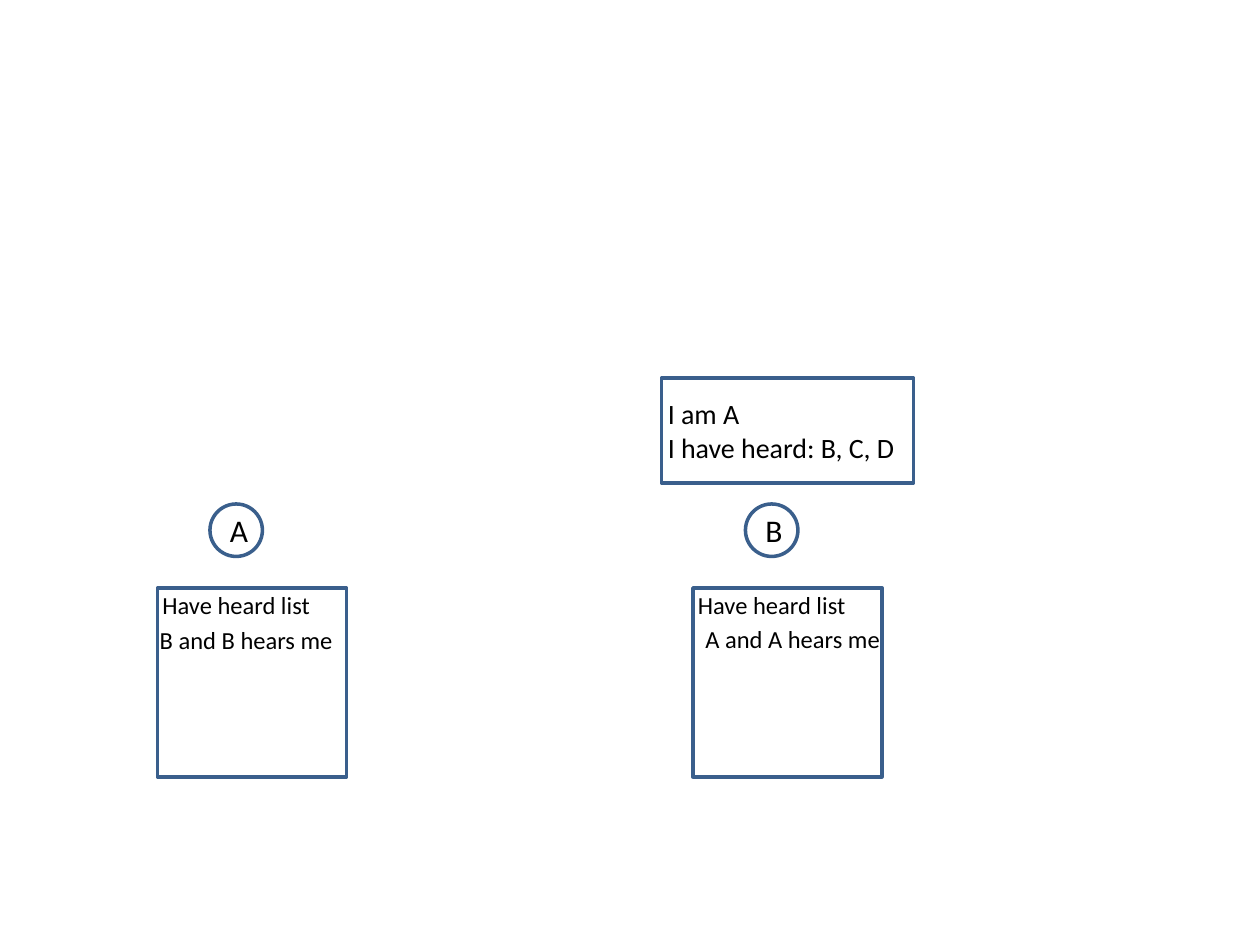
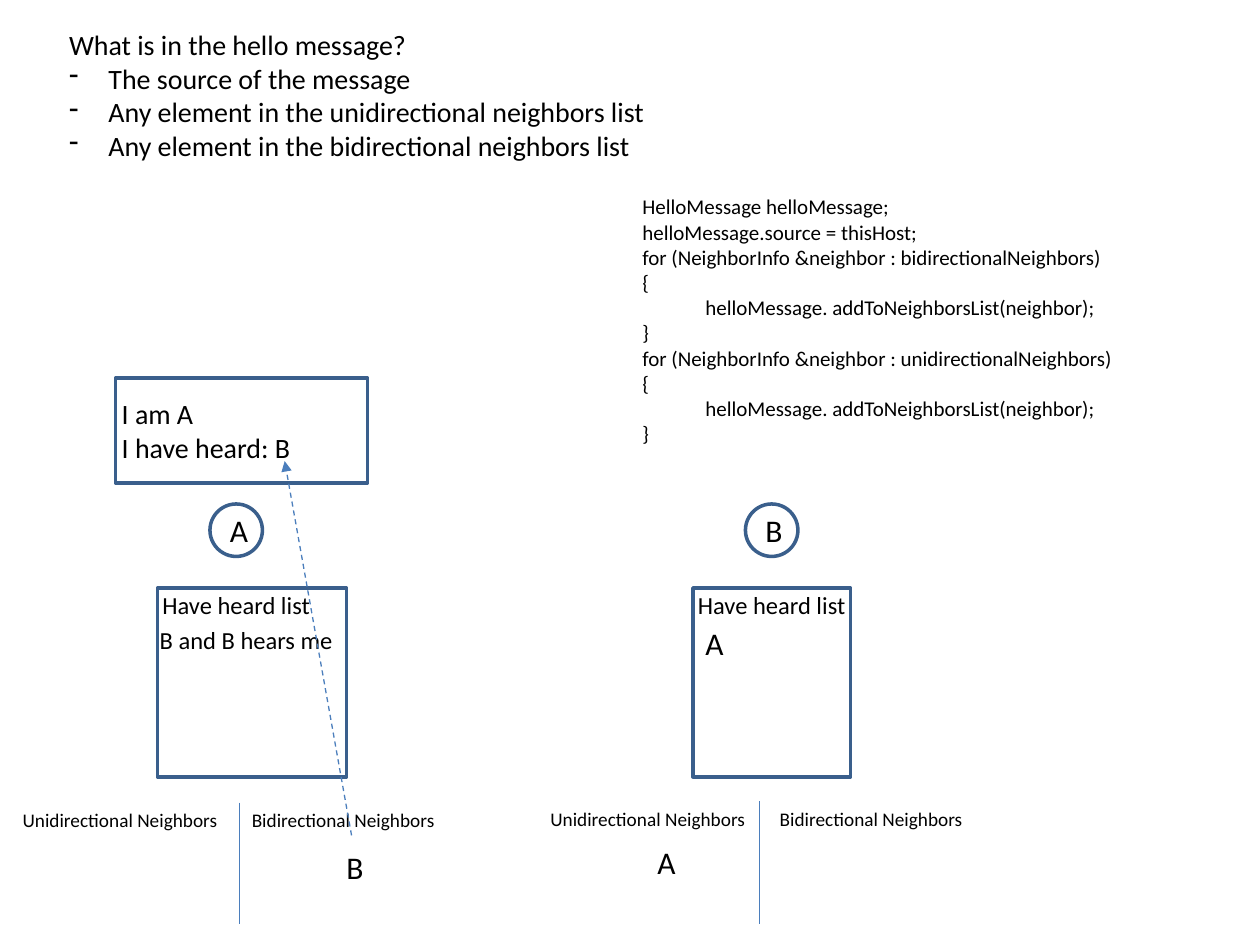
from lxml import etree
from pptx import Presentation
from pptx.dml.color import RGBColor
from pptx.enum.dml import MSO_LINE
from pptx.enum.shapes import MSO_CONNECTOR, MSO_SHAPE
from pptx.enum.text import MSO_ANCHOR, MSO_AUTO_SIZE, PP_ALIGN
from pptx.oxml.ns import qn
from pptx.util import Pt

OVAL, RECTANGLE = MSO_SHAPE.OVAL, MSO_SHAPE.RECTANGLE
STRAIGHT, DASH = MSO_CONNECTOR.STRAIGHT, MSO_LINE.DASH
MIDDLE, CENTER, LEFT = MSO_ANCHOR.MIDDLE, PP_ALIGN.CENTER, PP_ALIGN.LEFT
NO_FIT, GROW = MSO_AUTO_SIZE.NONE, MSO_AUTO_SIZE.SHAPE_TO_FIT_TEXT

OUTLINE = RGBColor(0x3A, 0x5F, 0x8C)
CONNECTOR = RGBColor(0x4B, 0x7E, 0xBC)
BLACK = RGBColor(0, 0, 0)
FONT = "Calibri"

# Content: each host has a heard-list entry (text, size, left, top, width)
HOST_X = {"A": 90, "B": 396}
A_ENTRY = ("B and B hears me", 14, 84.2, 353.5, 114.5)
SLIDES = [
    {
        "hosts": {
            "A": {"list_width": 108, "entry": A_ENTRY},
            "B": {"list_width": 108,
                  "entry": ("A and A hears me", 14, 396, 352.8, 115.2)},
        },
        "message": (378, ["I am A", "I have heard: B, C, D"]),
    },
    {
        "hosts": {
            "A": {"list_width": 108, "entry": A_ENTRY},
            "B": {"list_width": 90, "entry": ("A", 18, 396, 352.8, 25.2)},
        },
        "message": (66, ["I am A", "I have heard: B"]),
    },
]

# Neighbor tables: divider x, top, left of each heading, entry and its place
NEIGHBOR_TABLES = [
    {"divider": 136.8, "top": 458.6, "headings": (5.8, 136.8),
     "entry": ("B", 190.8, 481)},
    {"divider": 434.2, "top": 457.9, "headings": (307.4, 438.5),
     "entry": ("A", 368.6, 478.1)},
]
HEADINGS = [("Unidirectional Neighbors", 126.7), ("Bidirectional Neighbors", 119.5)]
TABLE_BOTTOM = 527.8
ENTRY_ARROW = ((200.9, 477.4), (162.7, 263.5))

QUESTION = "What is in the hello message?"
ANSWERS = [
    "The source of the message",
    "Any element in the unidirectional neighbors list",
    "Any element in the bidirectional neighbors list",
]
CODE = ["HelloMessage helloMessage;", "helloMessage.source = thisHost;"]
for direction in ("bidirectional", "unidirectional"):
    CODE += [f"for (NeighborInfo &neighbor : {direction}Neighbors)", "{",
             "\thelloMessage. addToNeighborsList(neighbor);", "}"]


def write(frame, lines, size, align=LEFT):
    for index, line in enumerate(lines):
        paragraph = frame.paragraphs[0] if index == 0 else frame.add_paragraph()
        paragraph.text = line
        paragraph.alignment = align
        paragraph.font.name = FONT
        paragraph.font.size = Pt(size)
        paragraph.font.color.rgb = BLACK


def add_text(slide, lines, size, left, top, width, height):
    box = slide.shapes.add_textbox(Pt(left), Pt(top), Pt(width), Pt(height))
    box.text_frame.word_wrap = False
    box.text_frame.auto_size = GROW
    write(box.text_frame, lines, size)
    return box.text_frame


def add_outline(slide, kind, left, top, width, height):
    shape = slide.shapes.add_shape(kind, Pt(left), Pt(top), Pt(width), Pt(height))
    shape.shadow.inherit = False
    shape.fill.background()
    shape.line.color.rgb = OUTLINE
    shape.line.width = Pt(2)
    shape.text_frame.vertical_anchor = MIDDLE
    return shape.text_frame


def add_line(slide, start, end):
    line = slide.shapes.add_connector(STRAIGHT, *map(Pt, start + end))
    line.line.color.rgb = CONNECTOR
    line.line.width = Pt(0.75)
    etree.SubElement(line._element.spPr, qn("a:effectLst"))
    return line


def add_bullet(paragraph):
    properties = paragraph._p.get_or_add_pPr()
    properties.set("marL", str(Pt(22.5)))
    properties.set("indent", str(-Pt(22.5)))
    etree.SubElement(properties, qn("a:buChar")).set("char", "-")
    # The bullet must come before the default run properties
    defaults = properties.find(qn("a:defRPr"))
    if defaults is not None:
        properties.append(defaults)


def add_hosts(slide, hosts):
    for name, host in hosts.items():
        left = HOST_X[name]
        write(add_outline(slide, OVAL, left + 30, 288, 30, 30), [name], 18, CENTER)
        add_outline(slide, RECTANGLE, left, 336, host["list_width"], 108)
        add_text(slide, ["Have heard list"], 14, left - 4.3, 333.4, 100, 24.2)
        text, size, entry_left, top, width = host["entry"]
        add_text(slide, [text], size, entry_left, top, width,
                 29 if size == 18 else 24.2)


def add_message(slide, left, lines):
    frame = add_outline(slide, RECTANGLE, left, 216, 144, 60)
    frame.margin_left = Pt(3.6)
    frame.margin_top = frame.margin_right = frame.margin_bottom = 0
    frame.word_wrap = False
    frame.auto_size = NO_FIT
    write(frame, lines, 16)


def add_neighbor_table(slide, table):
    for left, (heading, width) in zip(table["headings"], HEADINGS):
        add_text(slide, [heading], 11, left, table["top"], width, 20.6)
    add_line(slide, (table["divider"], table["top"]),
             (table["divider"], TABLE_BOTTOM))
    text, left, top = table["entry"]
    add_text(slide, [text], 18, left, top, 25, 29)


presentation = Presentation()
presentation.slide_width, presentation.slide_height = Pt(720), Pt(540)

# Both slides: hosts, their lists and the hello message
for content in SLIDES:
    slide = presentation.slides.add_slide(presentation.slide_layouts[6])
    add_hosts(slide, content["hosts"])
    add_message(slide, *content["message"])

# Second slide: neighbor tables, arrow into the message, explanation and code
for table in NEIGHBOR_TABLES:
    add_neighbor_table(slide, table)
arrow = add_line(slide, *ENTRY_ARROW)
arrow.line.dash_style = DASH
etree.SubElement(arrow.line._get_or_add_ln(), qn("a:tailEnd")).set("type", "triangle")

explanation = add_text(slide, [QUESTION] + ANSWERS, 16, 32.4, 12.2, 347, 85)
for paragraph in explanation.paragraphs[1:]:
    add_bullet(paragraph)
add_text(slide, CODE, 12, 360, 107.3, 311.8, 167)

presentation.save("out.pptx")
